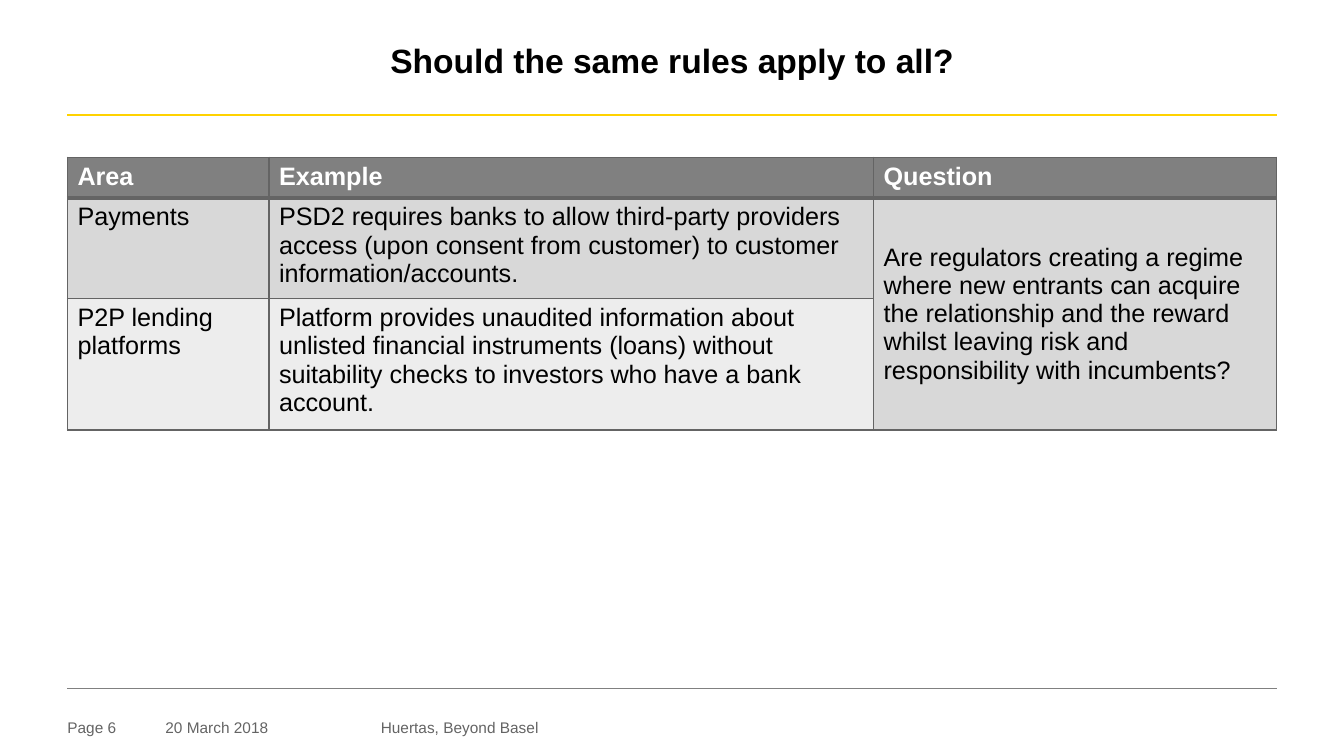
from lxml import etree
from pptx import Presentation
from pptx.dml.color import RGBColor
from pptx.enum.shapes import MSO_CONNECTOR
from pptx.enum.text import MSO_ANCHOR, PP_ALIGN
from pptx.oxml.ns import qn
from pptx.util import Cm, Pt

STRAIGHT = MSO_CONNECTOR.STRAIGHT
TOP, MIDDLE = MSO_ANCHOR.TOP, MSO_ANCHOR.MIDDLE
LEFT, CENTER = PP_ALIGN.LEFT, PP_ALIGN.CENTER

COLORS = {
    "black": "000000", "white": "FFFFFF", "yellow": "FFD200",
    "gray": "808080", "dark": "646464", "band": "D8D8D8", "light": "EDEDED",
}
FORMATS = {
    "title": {"size": Pt(24), "bold": True, "color": "black"},
    "header": {"size": Pt(18), "bold": True, "color": "white"},
    "body": {"size": Pt(18), "bold": False, "color": "black"},
    "footer": {"size": Pt(11), "bold": False, "color": "dark"},
}
MARGIN, WIDTH = 1.7, 30.49
ROWS = [
    ["Area", "Example", "Question"],
    ["Payments",
     "PSD2 requires banks to allow third-party providers access (upon consent "
     "from customer) to customer information/accounts.",
     "Are regulators creating a regime where new entrants can acquire the "
     "relationship and the reward whilst leaving risk and responsibility with "
     "incumbents?"],
    ["P2P lending platforms",
     "Platform provides unaudited information about unlisted financial "
     "instruments (loans) without suitability checks to investors who have a "
     "bank account.",
     ""],
]
ROW_FILLS = ["gray", "band", "light"]
FOOTERS = [
    ("Page 6", MARGIN, 2.46),
    ("20 March 2018", 4.17, 3.81),
    ("Huertas, Beyond Basel", 9.6, 12.73),
]


class SlideBuilder:
    def __init__(self, prs, font):
        self.s = prs.slides.add_slide(prs.slide_layouts[6])
        self.font = font

    def rgb(self, color):
        return RGBColor.from_string(COLORS[color])

    def paragraph(self, tf, text, style, align=LEFT):
        p = tf.paragraphs[0]
        p.alignment = align
        r = p.add_run()
        r.text = text
        r.font.name = self.font
        for name, value in FORMATS[style].items():
            if name == "color":
                r.font.color.rgb = self.rgb(value)
            else:
                setattr(r.font, name, value)
        return p

    def text(self, text, box, style, align=LEFT, anchor=TOP):
        tf = self.s.shapes.add_textbox(*map(Cm, box)).text_frame
        settings = {"word_wrap": True, "vertical_anchor": anchor,
                    "margin_left": 0, "margin_right": 0,
                    "margin_top": 0, "margin_bottom": 0}
        for name, value in settings.items():
            setattr(tf, name, value)
        return self.paragraph(tf, text, style, align)

    def rule(self, y, color, width):
        line = self.s.shapes.add_connector(
            STRAIGHT, Cm(MARGIN), Cm(y), Cm(MARGIN + WIDTH), Cm(y))
        line.line.color.rgb = self.rgb(color)
        line.line.width = Pt(width)
        etree.SubElement(line._element.spPr, qn("a:effectLst"))

    def borders(self, cell, widths):
        tc_pr = cell._tc.get_or_add_tcPr()
        for i, (side, width) in enumerate(widths.items()):
            ln = etree.Element(qn(f"a:ln{side}"), w=str(Pt(width)))
            fill = etree.SubElement(ln, qn("a:solidFill"))
            etree.SubElement(fill, qn("a:srgbClr"), val=COLORS["dark"])
            tc_pr.insert(i, ln)

    def table(self, rows, top, col_widths, row_heights):
        table = self.s.shapes.add_table(
            len(rows), len(col_widths), Cm(MARGIN), Cm(top),
            Cm(sum(col_widths)), Cm(sum(row_heights))).table
        for col, width in zip(table.columns, col_widths):
            col.width = Cm(width)
        for row, height in zip(table.rows, row_heights):
            row.height = Cm(height)
        for i, texts in enumerate(rows):
            for j, text in enumerate(texts):
                cell = table.cell(i, j)
                cell.fill.solid()
                cell.fill.fore_color.rgb = self.rgb(ROW_FILLS[i])
                self.borders(cell, {"L": 1, "R": 1, "T": 3 if i == 1 else 1,
                                    "B": 3 if i == 0 else 1})
                if text:
                    self.paragraph(cell.text_frame, text,
                                   "body" if i else "header")
        return table


def main():
    prs = Presentation()
    prs.slide_width, prs.slide_height = Cm(33.88), Cm(19.05)
    slide = SlideBuilder(prs, "Arial")
    slide.rule(2.9, "yellow", 1.5)
    slide.rule(17.35, "gray", 0.25)
    title = slide.text("Should the same rules apply to all?",
                       (MARGIN, 0.4, WIDTH, 2.4), "title", CENTER, MIDDLE)
    title.line_spacing = 0.85
    table = slide.table(ROWS, 3.96, [5.08, 15.24, 10.16], [1.03, 2.38, 3.1])
    question = table.cell(1, 2)
    question.merge(table.cell(2, 2))
    question.vertical_anchor = MIDDLE
    for text, left, width in FOOTERS:
        slide.text(text, (left, 18.1, width, 0.56), "footer")
    prs.save("out.pptx")


if __name__ == "__main__":
    main()
